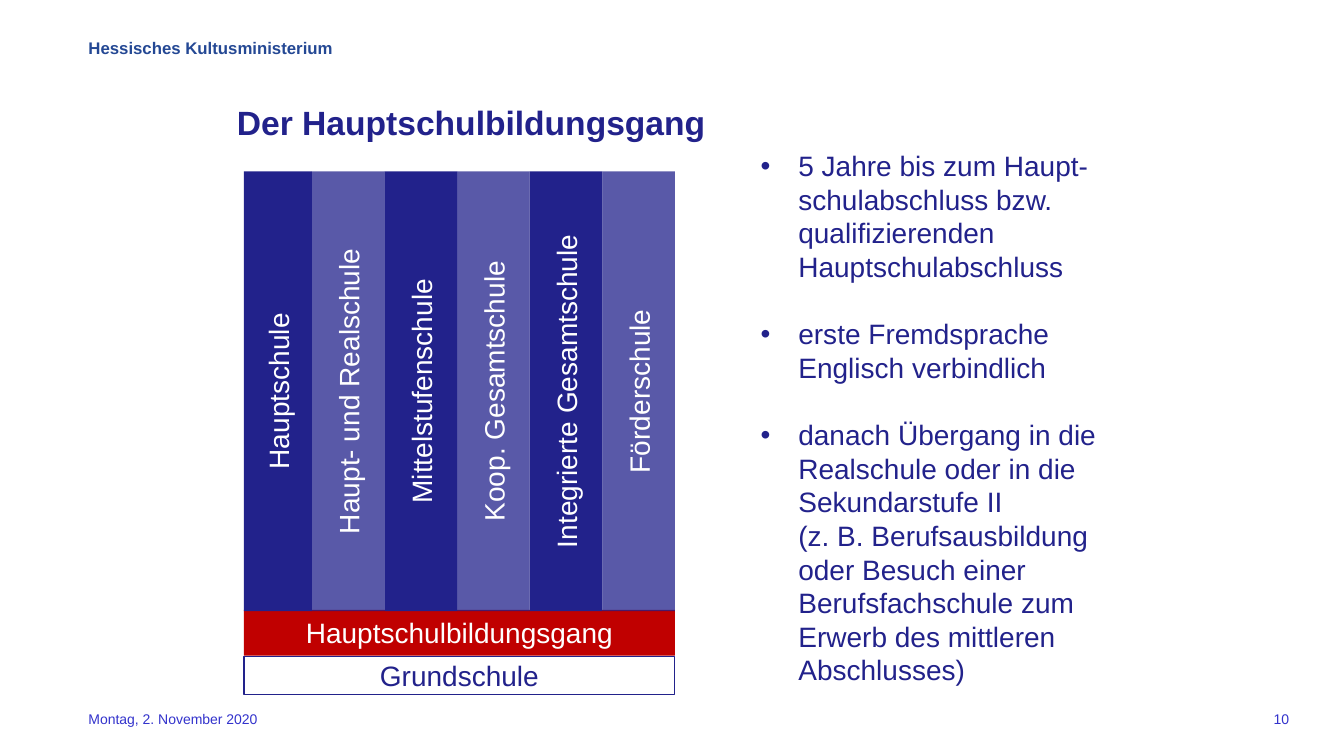
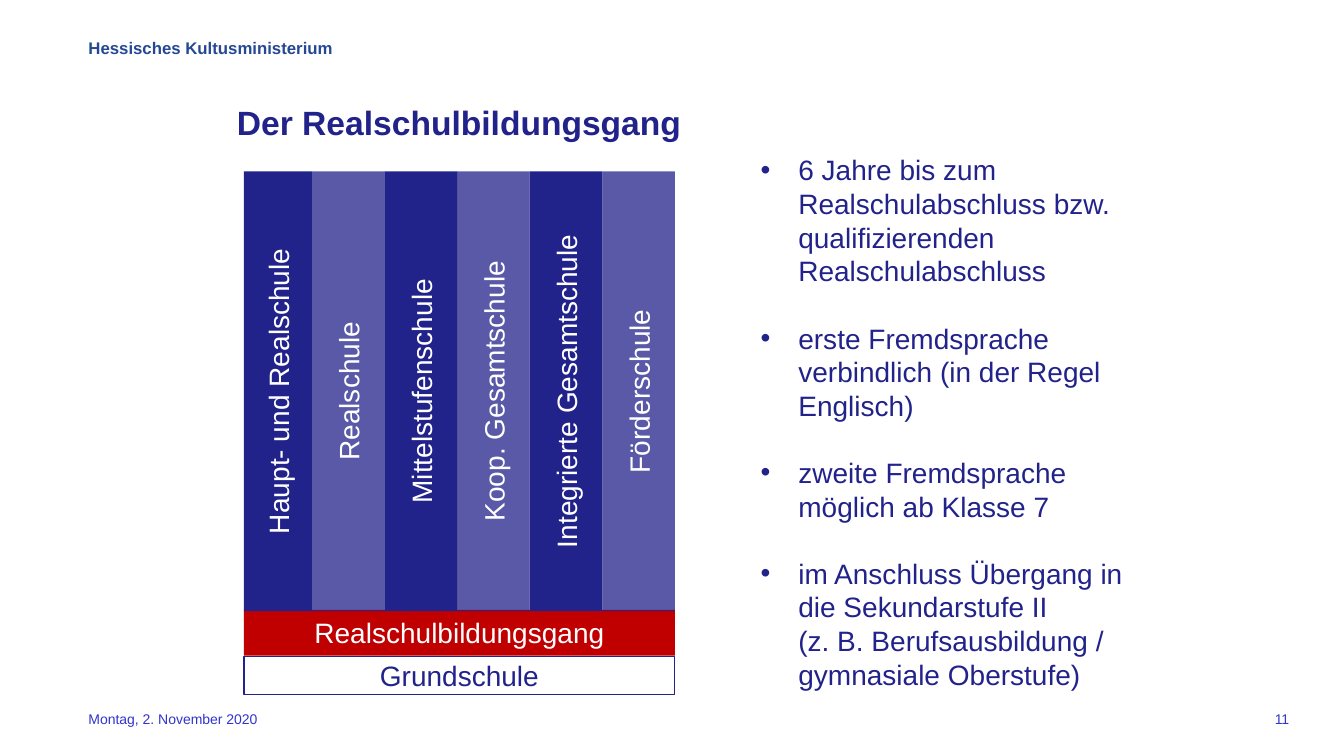
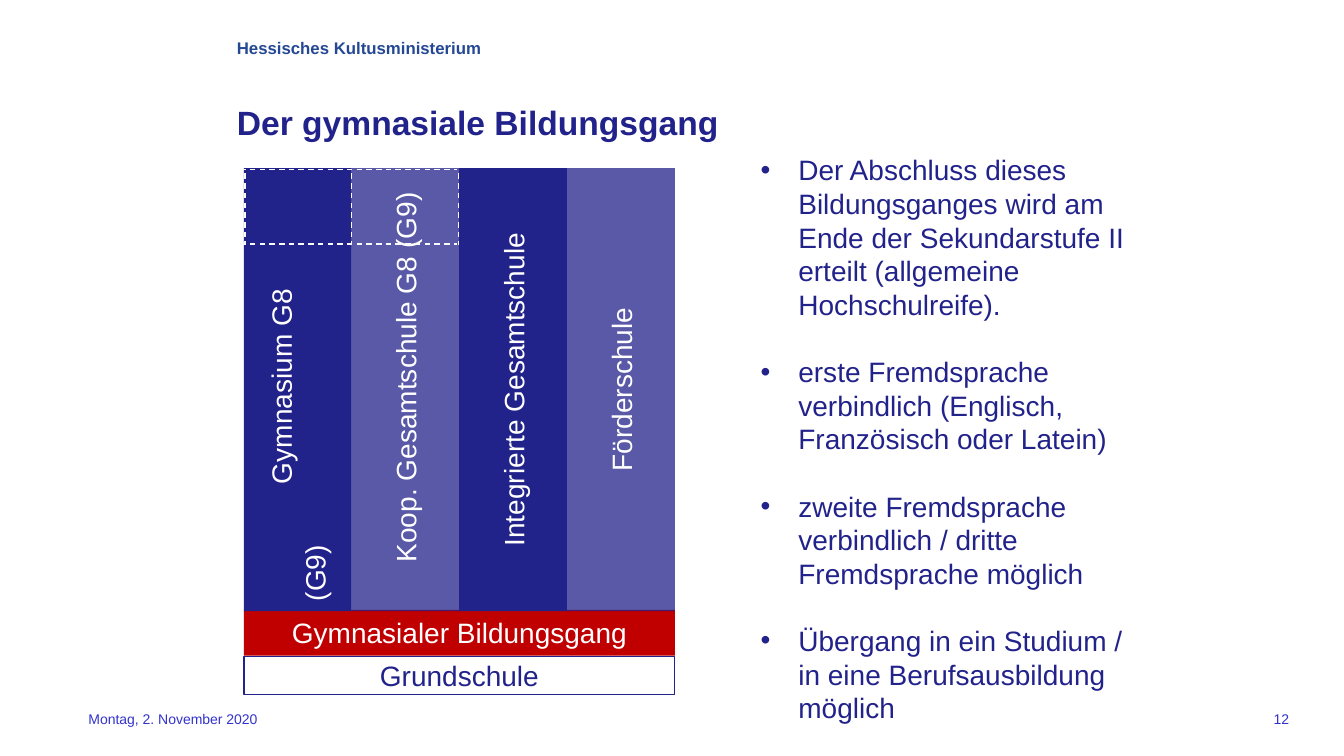
"""Build three slides on the school tracks, each with a column diagram and key facts."""
from dataclasses import dataclass

from lxml import etree
from pptx import Presentation
from pptx import util as u
from pptx.dml.color import RGBColor
from pptx.enum import dml, shapes, text
from pptx.oxml.ns import qn

FONT = "Arial"
NAVY, RED, WHITE = "22228B", "C00000", "FFFFFF"
HEADER_BLUE, FOOTER_BLUE, DASH_GREY = "244894", "3333CC", "F9F9F9"
DIAGRAM_LEFT, DIAGRAM_RIGHT, COLUMN_BOTTOM = 6.15, 17.01, 15.4
FACT_INDENT, FACT_LINE = 0.95, 24


@dataclass(frozen=True)
class Box:
    left: float
    top: float
    width: float
    height: float

    def lengths(self):
        return [u.Cm(value) for value in (self.left, self.top, self.width, self.height)]


@dataclass(frozen=True)
class Style:
    size: int
    color: str
    bold: bool = False
    align: text.PP_ALIGN = text.PP_ALIGN.LEFT


@dataclass(frozen=True)
class Column:
    label: str
    indent: float | None = None
    tab: float | None = None


@dataclass(frozen=True)
class Track:
    title: str
    name: str
    columns: list[Column]
    facts: list[str]
    column_width: float = 1.83
    column_top: float = 4.32
    header_left: float = 1.98
    title_height: float = 3.18
    facts_height: float = 13.94
    facts_centred: bool = False
    has_extra_year: bool = False


HEADER = Style(12, HEADER_BLUE, bold=True)
TITLE = Style(24, NAVY, bold=True)
FACT = Style(20, NAVY)
DATE = Style(10, FOOTER_BLUE)
PAGE = Style(10, FOOTER_BLUE, align=text.PP_ALIGN.RIGHT)
BAR = Style(20, WHITE, align=text.PP_ALIGN.CENTER)
BASE = Style(20, NAVY, align=text.PP_ALIGN.CENTER)
INDENTED = Style(20, WHITE)

COMMON_COLUMNS = [
    Column("Mittelstufenschule"),
    Column("Koop. Gesamtschule"),
    Column("Integrierte Gesamtschule"),
    Column("Förderschule"),
]

TRACKS = [
    Track(
        "Der Hauptschulbildungsgang",
        "Hauptschulbildungsgang",
        [Column("Hauptschule"), Column("Haupt- und Realschule"), *COMMON_COLUMNS],
        [
            "5 Jahre bis zum Haupt-schulabschluss bzw. qualifizierenden Hauptschulabschluss",
            "erste Fremdsprache Englisch verbindlich",
            "danach Übergang in die Realschule oder in die Sekundarstufe II \v"
            "(z. B. Berufsausbildung oder Besuch einer Berufsfachschule "
            "zum Erwerb des mittleren Abschlusses)",
        ],
        title_height=1.4,
        facts_height=13.59,
        facts_centred=True,
    ),
    Track(
        "Der Realschulbildungsgang",
        "Realschulbildungsgang",
        [Column("Haupt- und Realschule"), Column("Realschule"), *COMMON_COLUMNS],
        [
            "6 Jahre bis zum Realschulabschluss bzw. qualifizierenden Realschulabschluss",
            "erste Fremdsprache verbindlich (in der Regel Englisch)",
            "zweite Fremdsprache möglich ab Klasse 7",
            "im Anschluss Übergang in die Sekundarstufe II \v"
            "(z. B. Berufsausbildung / gymnasiale Oberstufe)",
        ],
    ),
    Track(
        "Der gymnasiale Bildungsgang",
        "Gymnasialer Bildungsgang",
        [
            Column("Gymnasium G8\v(G9)", indent=2.95),
            Column("Koop. Gesamtschule G8\t(G9)", indent=0.98, tab=9.2),
            Column("Integrierte Gesamtschule"),
            Column("Förderschule"),
        ],
        [
            "Der Abschluss dieses Bildungsganges wird am Ende der Sekundarstufe II "
            "erteilt (allgemeine Hochschulreife).",
            "erste Fremdsprache verbindlich (Englisch, Französisch oder Latein)",
            "zweite Fremdsprache verbindlich / dritte Fremdsprache möglich",
            "Übergang in ein Studium / in eine Berufsausbildung möglich",
        ],
        column_width=2.72,
        column_top=4.24,
        header_left=5.72,
        facts_height=14.78,
        has_extra_year=True,
    ),
]


def rgb(color: str) -> RGBColor:
    """Turn a hex string into a colour."""
    return RGBColor.from_string(color)


def style_paragraph(paragraph, style: Style) -> None:
    """Apply font and alignment to a paragraph."""
    paragraph.alignment = style.align
    font = paragraph.font
    font.name, font.size, font.bold = FONT, u.Pt(style.size), style.bold
    font.color.rgb = rgb(style.color)


def add_text(slide, box: Box, content: str, style: Style):
    """Add a wrapping text box with one paragraph."""
    shape = slide.shapes.add_textbox(*box.lengths())
    shape.text_frame.word_wrap = True
    paragraph = shape.text_frame.paragraphs[0]
    paragraph.text = content
    style_paragraph(paragraph, style)
    return shape


def add_bar(slide, box: Box, content: str, style: Style, fill: str, outline: str | None = None):
    """Add a filled rectangle with a label."""
    shape = slide.shapes.add_shape(shapes.MSO_SHAPE.RECTANGLE, *box.lengths())
    shape.shadow.inherit = False
    shape.fill.solid()
    shape.fill.fore_color.rgb = rgb(fill)
    if outline:
        shape.line.color.rgb = rgb(outline)
        shape.line.width = u.Pt(0.75)
    else:
        shape.line.fill.background()
    shape.text_frame.word_wrap = True
    shape.text_frame.vertical_anchor = text.MSO_ANCHOR.MIDDLE
    paragraph = shape.text_frame.paragraphs[0]
    paragraph.text = content
    style_paragraph(paragraph, style)
    return shape


def add_column(slide, box: Box, column: Column, translucent: bool) -> None:
    """Add a school column whose label reads upwards."""
    style = BAR if column.indent is None else INDENTED
    shape = add_bar(slide, box, column.label, style, NAVY)
    shape.element.txBody.bodyPr.set("vert", "vert270")
    if translucent:
        fill_color = shape.element.spPr.find(qn("a:solidFill")).find(qn("a:srgbClr"))
        etree.SubElement(fill_color, qn("a:alpha")).set("val", "75000")
    properties = shape.text_frame.paragraphs[0]._p.get_or_add_pPr()
    if column.indent is not None:
        properties.set("marL", "0")
        properties.set("indent", str(u.Cm(column.indent)))
    if column.tab is not None:
        tabs = etree.Element(qn("a:tabLst"))
        etree.SubElement(tabs, qn("a:tab"), pos=str(u.Cm(column.tab)), algn="l")
        properties.insert(0, tabs)


def add_dash(slide, left: float, top: float, right: float, bottom: float) -> None:
    """Add a thin dashed line."""
    ends = [u.Cm(value) for value in (left, top, right, bottom)]
    line = slide.shapes.add_connector(shapes.MSO_CONNECTOR.STRAIGHT, *ends)
    line.line.color.rgb = rgb(DASH_GREY)
    line.line.width = u.Pt(1)
    line.line.dash_style = dml.MSO_LINE.DASH
    etree.SubElement(line.element.spPr, qn("a:effectLst"))


def add_extra_year(slide) -> None:
    """Outline the ninth year above the first two columns."""
    for top in (6.15, 4.27):
        for left in (6.05, 8.74):
            add_dash(slide, left, top, left + 2.77, top)
    for index in range(3):
        left = 6.17 + index * 2.69
        add_dash(slide, left, 4.37, left, 6.17)


def add_facts(slide, track: Track) -> None:
    """Add the bulleted facts beside the diagram."""
    shape = slide.shapes.add_textbox(*Box(18.92, 3.73, 9.8, track.facts_height).lengths())
    frame = shape.text_frame
    frame.word_wrap = True
    if track.facts_centred:
        frame.vertical_anchor = text.MSO_ANCHOR.MIDDLE
    for index, fact in enumerate(track.facts):
        paragraph = frame.add_paragraph() if index else frame.paragraphs[0]
        paragraph.text = fact
        properties = paragraph._p.get_or_add_pPr()
        properties.set("marL", str(u.Cm(FACT_INDENT)))
        properties.set("indent", str(-u.Cm(FACT_INDENT)))
        etree.SubElement(properties, qn("a:buFont"), typeface=FONT)
        etree.SubElement(properties, qn("a:buChar"), char="•")
        paragraph.line_spacing = u.Pt(FACT_LINE)
        if index:
            paragraph.space_before = u.Pt(FACT_LINE)
        style_paragraph(paragraph, FACT)


def add_diagram(slide, track: Track) -> None:
    """Add the base, the track bar and the school columns."""
    width = DIAGRAM_RIGHT - DIAGRAM_LEFT
    add_bar(slide, Box(DIAGRAM_LEFT, 16.54, width, 0.97), "Grundschule", BASE, WHITE, NAVY)
    add_bar(slide, Box(DIAGRAM_LEFT, 15.37, width, 1.15), track.name, BAR, RED)
    height = COLUMN_BOTTOM - track.column_top
    for index, column in enumerate(track.columns):
        right = DIAGRAM_RIGHT - (len(track.columns) - 1 - index) * track.column_width
        left = right - track.column_width if index else DIAGRAM_LEFT
        box = Box(left, track.column_top, right - left, height)
        add_column(slide, box, column, translucent=index % 2 == 1)
    if track.has_extra_year:
        add_extra_year(slide)


def add_frame(slide, track: Track, number: int) -> None:
    """Add header, title, date and page number."""
    add_text(slide, Box(track.header_left, 0.82, 10.72, 1.27), "Hessisches Kultusministerium", HEADER)
    title = add_text(slide, Box(5.72, 2.34, 21.59, track.title_height), track.title, TITLE)
    title.text_frame.margin_top = u.Cm(0.22)
    add_text(slide, Box(1.98, 17.78, 10.9, 1.07), "Montag, 2. November 2020", DATE)
    add_text(slide, Box(24.28, 17.78, 8.46, 0.84), str(number), PAGE)


def main() -> None:
    """Build and save the presentation."""
    presentation = Presentation()
    presentation.slide_width, presentation.slide_height = u.Cm(33.87), u.Cm(19.05)
    for number, track in enumerate(TRACKS, start=10):
        slide = presentation.slides.add_slide(presentation.slide_layouts[6])
        add_frame(slide, track, number)
        add_facts(slide, track)
        add_diagram(slide, track)
    presentation.save("out.pptx")


if __name__ == "__main__":
    main()
